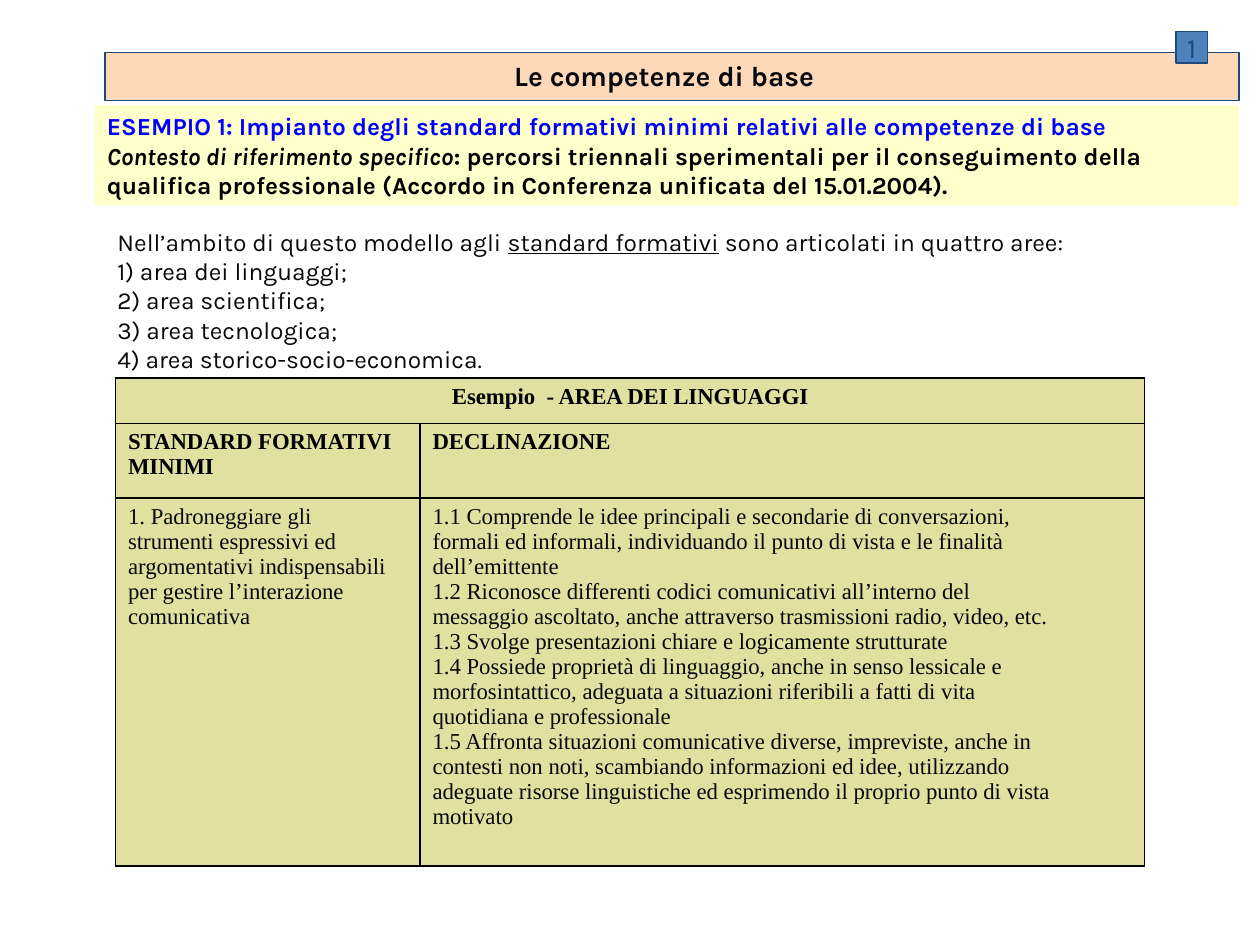
from lxml.etree import SubElement
from pptx import Presentation
from pptx.dml.color import RGBColor
from pptx.enum.shapes import MSO_SHAPE
from pptx.enum.text import MSO_ANCHOR, PP_ALIGN
from pptx.oxml.ns import qn
from pptx.util import Pt

COLORS = {
    "ink": "08080C", "black": "000000", "blue": "0000FF", "navy": "1F497D",
    "peach": "FDD9B9", "badge": "4F81BD", "yellow": "FFFFCC", "olive": "E2E0A0",
}
BODY_FONT = "Karla"
TABLE_FONT = "Times New Roman"

INTRO = [
    [("Nell’ambito di questo modello agli ", {}),
     ("standard formativi", {"underline": True}),
     (" sono articolati in quattro aree:", {})],
    "1) area dei linguaggi;",
    "2) area scientifica;",
    "3) area tecnologica;",
    "4) area storico-socio-economica.",
]
EXAMPLE = [
    [("ESEMPIO 1: Impianto degli standard formativi minimi relativi alle "
      "competenze di base", {"color": "blue"})],
    [("Contesto di riferimento specifico", {"italic": True}),
     (": percorsi triennali sperimentali per il conseguimento della qualifica "
      "professionale (Accordo in Conferenza unificata del 15.01.2004).", {})],
]
STANDARD = [
    "1. Padroneggiare gli",
    "strumenti espressivi ed",
    "argomentativi indispensabili",
    "per gestire l’interazione",
    "comunicativa",
]
DECLINATION = [
    "1.1 Comprende le idee principali e secondarie di conversazioni,",
    "formali ed informali, individuando il punto di vista e le finalità",
    "dell’emittente",
    "1.2 Riconosce differenti codici comunicativi all’interno del",
    "messaggio ascoltato, anche attraverso trasmissioni radio, video, etc.",
    "1.3 Svolge presentazioni chiare e logicamente strutturate",
    "1.4 Possiede proprietà di linguaggio, anche in senso lessicale e",
    "morfosintattico, adeguata a situazioni riferibili a fatti di vita",
    "quotidiana e professionale",
    "1.5 Affronta situazioni comunicative diverse, impreviste, anche in",
    "contesti non noti, scambiando informazioni ed idee, utilizzando",
    "adeguate risorse linguistiche ed esprimendo il proprio punto di vista",
    "motivato",
]


def color(name):
    return RGBColor.from_string(COLORS[name])


def add_run(paragraph, text, size, font=BODY_FONT, color_name="ink", bold=False, **changes):
    run = paragraph.add_run()
    run.text = text
    run.font.name = font
    run.font.size = Pt(size)
    run.font.bold = bold
    run.font.italic = changes.get("italic", False)
    run.font.underline = changes.get("underline", False)
    run.font.color.rgb = color(changes.get("color", color_name))


def write(frame, paragraphs, size, align=PP_ALIGN.LEFT, **style):
    """Fill a text frame; a paragraph is a string or a list of (text, changes)."""
    for index, content in enumerate(paragraphs):
        paragraph = frame.add_paragraph() if index else frame.paragraphs[0]
        paragraph.alignment = align
        runs = [(content, {})] if isinstance(content, str) else content
        for text, changes in runs:
            add_run(paragraph, text, size, **style, **changes)


def add_box(slide, left, top, width, height, fill, line=None, anchor=MSO_ANCHOR.TOP):
    shape = slide.shapes.add_shape(
        MSO_SHAPE.RECTANGLE, Pt(left), Pt(top), Pt(width), Pt(height))
    shape.shadow.inherit = False
    shape.fill.solid()
    shape.fill.fore_color.rgb = color(fill)
    if line:
        shape.line.color.rgb = color(line)
        shape.line.width = Pt(0.75)
    else:
        shape.line.fill.background()
    shape.text_frame.word_wrap = True
    shape.text_frame.vertical_anchor = anchor
    return shape


def add_text(slide, left, top, width, height):
    frame = slide.shapes.add_textbox(Pt(left), Pt(top), Pt(width), Pt(height)).text_frame
    frame.word_wrap = True
    return frame


def style_cell(cell):
    """Give a cell thin black borders and the table's fill."""
    properties = cell._tc.get_or_add_tcPr()
    for side in ("a:lnL", "a:lnR", "a:lnT", "a:lnB"):
        border = SubElement(properties, qn(side), w=str(Pt(1)))
        fill = SubElement(border, qn("a:solidFill"))
        SubElement(fill, qn("a:srgbClr"), val=COLORS["black"])
    cell.fill.solid()
    cell.fill.fore_color.rgb = color("olive")


def add_standards_table(slide, left, top, widths, heights):
    table = slide.shapes.add_table(
        len(heights), len(widths), Pt(left), Pt(top),
        Pt(sum(widths)), Pt(sum(heights))).table
    for column, width in zip(table.columns, widths):
        column.width = Pt(width)
    for row, height in zip(table.rows, heights):
        row.height = Pt(height)
    for cell in table.iter_cells():
        style_cell(cell)
    table.cell(0, 0).merge(table.cell(0, 1))

    header = {"size": 13, "font": TABLE_FONT, "color_name": "black", "bold": True}
    body = {"size": 13, "font": TABLE_FONT}
    write(table.cell(0, 0).text_frame, ["Esempio  - AREA DEI LINGUAGGI"],
          align=PP_ALIGN.CENTER, **header)
    write(table.cell(1, 0).text_frame, ["STANDARD FORMATIVI MINIMI"], **header)
    write(table.cell(1, 1).text_frame, ["DECLINAZIONE"], **header)
    write(table.cell(2, 0).text_frame, STANDARD, **body)
    write(table.cell(2, 1).text_frame, DECLINATION, **body)


def main():
    presentation = Presentation()
    presentation.slide_width, presentation.slide_height = Pt(720), Pt(540)
    slide = presentation.slides.add_slide(presentation.slide_layouts[6])

    # Title bar, its text set slightly left of centre
    title = add_box(slide, 60, 30, 648, 27.5, "peach", "navy").text_frame
    title.margin_right = Pt(16)
    write(title, ["Le competenze di base"], 16, PP_ALIGN.CENTER, bold=True)

    # Number badge
    badge = add_box(slide, 672, 18, 18, 18, "badge", "navy", MSO_ANCHOR.MIDDLE).text_frame
    badge.word_wrap = False
    write(badge, ["1"], 16, PP_ALIGN.CENTER, color_name="navy")

    # Example heading and introduction
    example = add_box(slide, 54, 60, 654, 57.5, "yellow").text_frame
    write(example, EXAMPLE, 14, color_name="black", bold=True)
    write(add_text(slide, 60, 126, 612, 91), INTRO, 14)

    # Standards table
    add_standards_table(slide, 66, 216, [174, 414], [26, 42.5, 209.5])

    presentation.save("out.pptx")


if __name__ == "__main__":
    main()
